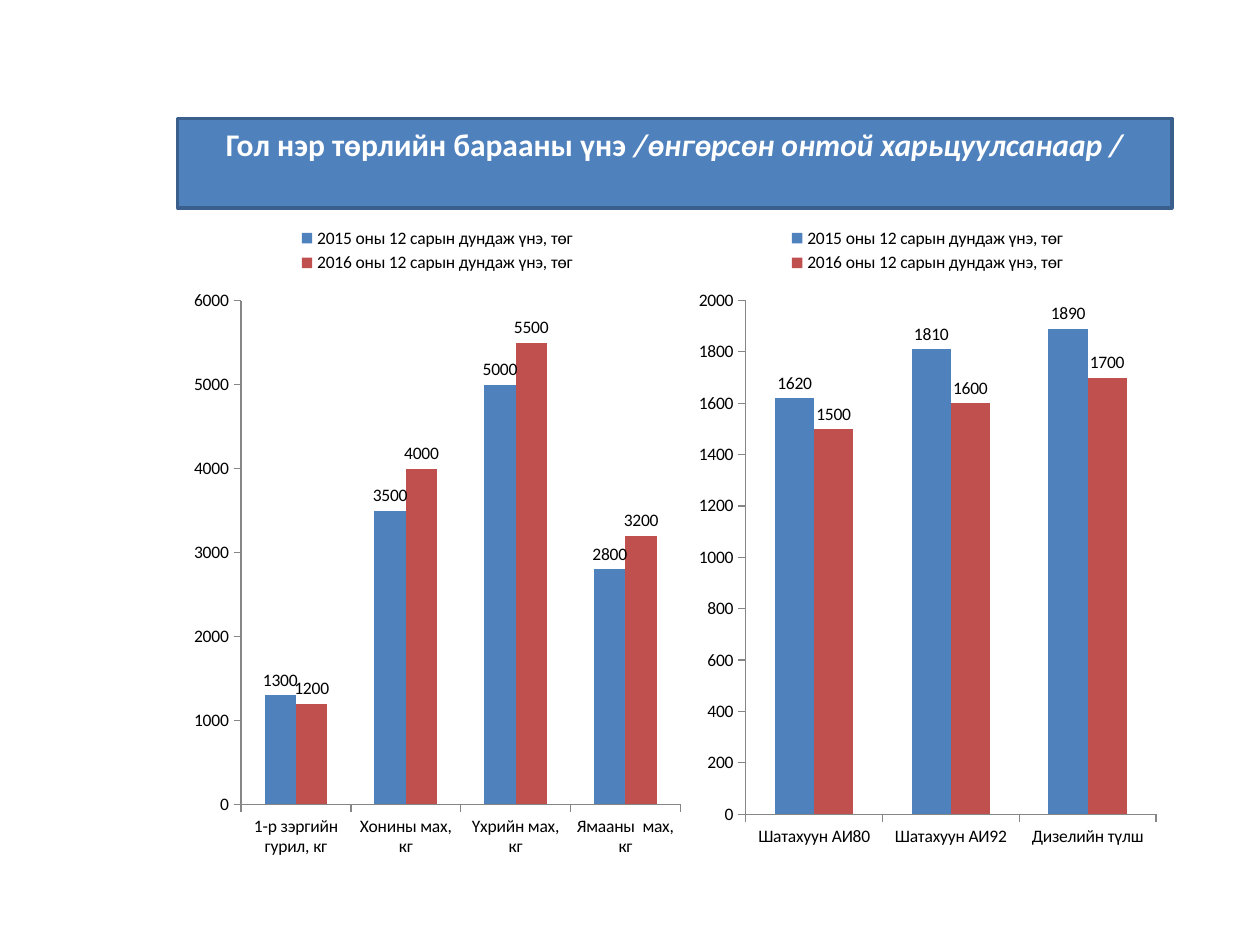
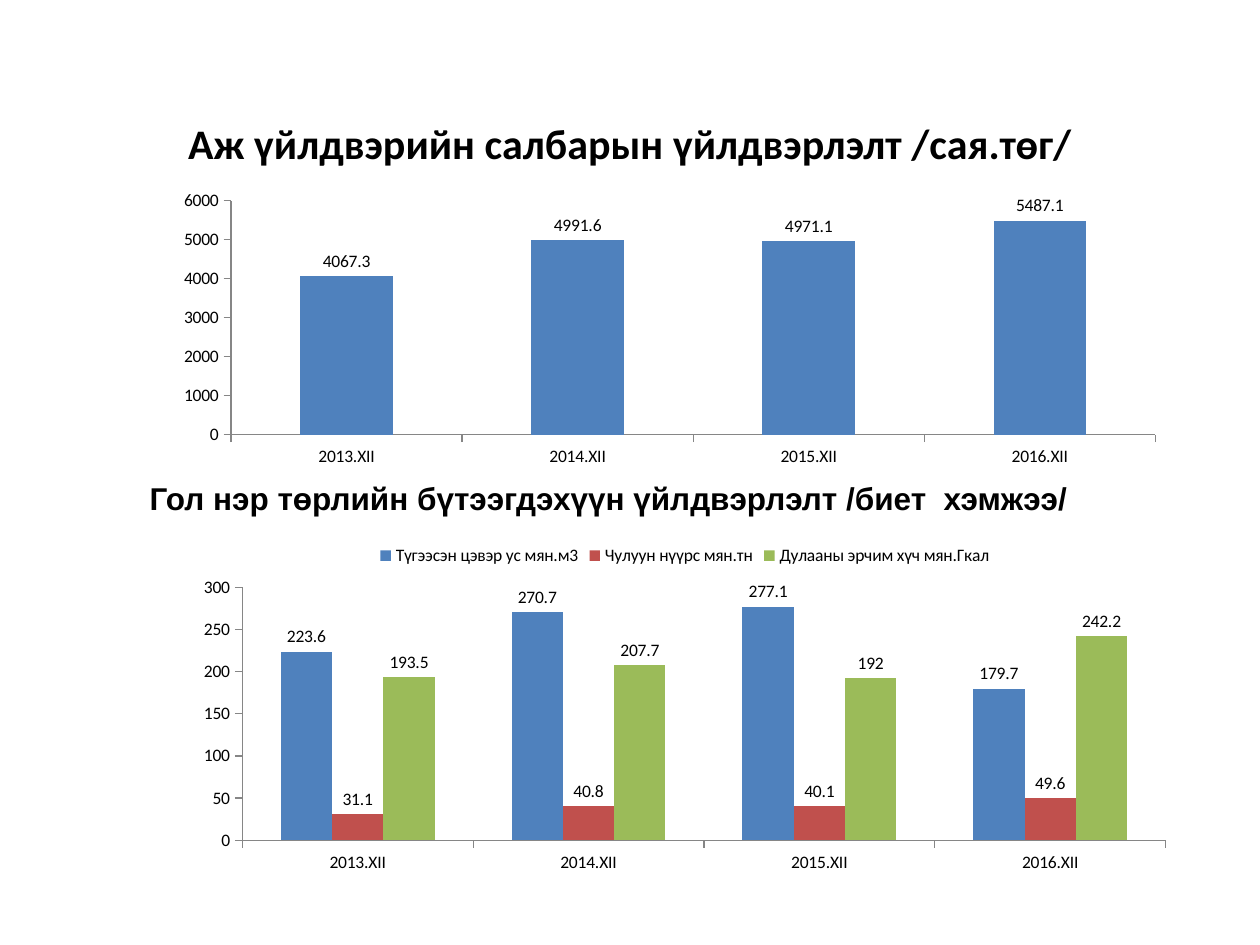
"""Build two slides on prices of main goods and on industrial output."""
from dataclasses import dataclass

from pptx import Presentation
from pptx.chart.data import CategoryChartData
from pptx.dml.color import RGBColor
from pptx.enum.chart import XL_CHART_TYPE as Kind
from pptx.enum.chart import XL_LABEL_POSITION as Spot
from pptx.enum.chart import XL_LEGEND_POSITION as Side
from pptx.enum.chart import XL_TICK_MARK as Tick
from pptx.enum.shapes import MSO_SHAPE as Form
from pptx.enum.text import MSO_ANCHOR as Anchor
from pptx.enum.text import PP_ALIGN as Align
from pptx.util import Inches, Pt

BLUE = RGBColor(0x4F, 0x81, 0xBD)
RED = RGBColor(0xC0, 0x50, 0x4D)
GREEN = RGBColor(0x9B, 0xBB, 0x59)
EDGE = RGBColor(0x3A, 0x5F, 0x8C)
GREY = RGBColor(0x86, 0x86, 0x86)
BLACK = RGBColor(0, 0, 0)
WHITE = RGBColor(0xFF, 0xFF, 0xFF)
HUES = (BLUE, RED, GREEN)
FACE = "Calibri"
TITLE_ONLY, BLANK = 5, 6

PRICES = tuple(f"{year} оны 12 сарын дундаж үнэ, төг" for year in (2015, 2016))
YEARS = tuple(f"{year}.XII" for year in range(2013, 2017))


@dataclass(frozen=True)
class Box:
    left: float
    top: float
    width: float
    height: float

    def lengths(self) -> tuple:
        return tuple(Inches(n) for n in (self.left, self.top, self.width, self.height))


@dataclass(frozen=True)
class Bars:
    box: Box
    cats: tuple
    series: dict
    top: float
    step: float
    legend: bool = True


FUEL = Bars(
    Box(5.47, 1.7, 3.78, 5.12),
    ("Шатахуун АИ80", "Шатахуун АИ92", "Дизелийн түлш"),
    dict(zip(PRICES, ((1620, 1810, 1890), (1500, 1600, 1700)))),
    2000, 200,
)
FOOD = Bars(
    Box(1.46, 1.7, 4.02, 5.2),
    ("1-р зэргийн гурил, кг", "Хонины мах, кг", "Үхрийн мах, кг", "Ямааны  мах, кг"),
    dict(zip(PRICES, ((1300, 3500, 5000, 2800), (1200, 4000, 5500, 3200)))),
    6000, 1000,
)
OUTPUT = Bars(
    Box(1.3, 1.47, 8.03, 2.28), YEARS,
    {"Series 1": (4067.3, 4991.6, 4971.1, 5487.1)},
    6000, 1000, legend=False,
)
GOODS = Bars(
    Box(1.46, 4.22, 7.95, 2.76), YEARS,
    {
        "Түгээсэн цэвэр ус мян.м3": (223.6, 270.7, 277.1, 179.7),
        "Чулуун нүүрс мян.тн": (31.1, 40.8, 40.1, 49.6),
        "Дулааны эрчим хүч мян.Гкал": (193.5, 207.7, 192, 242.2),
    },
    300, 50,
)


def write(shape, text: str, *, size: int = 18, face: str = FACE, color=BLACK,
          align=Align.LEFT, anchor=Anchor.TOP, tail: str = "") -> None:
    """Fill a shape with one bold line, with an optional italic tail."""
    frame = shape.text_frame
    frame.word_wrap = True
    frame.vertical_anchor = anchor
    para = frame.paragraphs[0]
    para.alignment = align
    for part, slant in ((text, False), (tail, True)):
        if part:
            run = para.add_run()
            run.text = part
            font = run.font
            font.name, font.size, font.bold, font.italic = face, Pt(size), True, slant
            font.color.rgb = color


def place(shape, box: Box) -> None:
    """Move a shape to a box."""
    shape.left, shape.top, shape.width, shape.height = box.lengths()


def draw_axis(axis) -> None:
    """Give an axis a thin grey line with outer ticks and no grid."""
    axis.has_major_gridlines = False
    axis.major_tick_mark = Tick.OUTSIDE
    axis.minor_tick_mark = Tick.NONE
    axis.format.line.color.rgb = GREY
    axis.format.line.width = Pt(0.75)


def draw_bars(slide, bars: Bars) -> None:
    """Add a clustered column chart with value labels."""
    data = CategoryChartData()
    data.categories = bars.cats
    for name, vals in bars.series.items():
        data.add_series(name, vals)
    chart = slide.shapes.add_chart(Kind.COLUMN_CLUSTERED, *bars.box.lengths(), data).chart
    chart.font.name, chart.font.size = FACE, Pt(10)
    chart.font.color.rgb = BLACK
    chart.has_title = False
    chart.has_legend = bars.legend
    if bars.legend:
        chart.legend.position = Side.TOP
        chart.legend.include_in_layout = False
    draw_axis(chart.category_axis)
    scale = chart.value_axis
    draw_axis(scale)
    scale.minimum_scale, scale.maximum_scale = 0, bars.top
    scale.major_unit = bars.step
    plot = chart.plots[0]
    plot.gap_width, plot.overlap = 150, 0
    plot.vary_by_categories = False
    for series, hue in zip(plot.series, HUES):
        series.format.fill.solid()
        series.format.fill.fore_color.rgb = hue
        series.invert_if_negative = False
        labels = series.data_labels
        labels.show_value = True
        labels.position = Spot.OUTSIDE_END


def show_prices(deck) -> None:
    """Add the slide that compares prices."""
    slide = deck.slides.add_slide(deck.slide_layouts[BLANK])
    band = slide.shapes.add_shape(Form.RECTANGLE, *Box(1.41, 0.94, 7.89, 0.71).lengths())
    band.shadow.inherit = False
    band.fill.solid()
    band.fill.fore_color.rgb = BLUE
    band.line.color.rgb = EDGE
    band.line.width = Pt(2)
    write(band, "Гол нэр төрлийн барааны үнэ ", tail="/өнгөрсөн онтой харьцуулсанаар /",
          color=WHITE, align=Align.CENTER)
    for bars in (FUEL, FOOD):
        draw_bars(slide, bars)


def show_output(deck) -> None:
    """Add the slide on industrial output."""
    slide = deck.slides.add_slide(deck.slide_layouts[TITLE_ONLY])
    title = slide.shapes.title
    place(title, Box(0.5, 0.78, 9, 0.7))
    write(title, "Аж үйлдвэрийн салбарын үйлдвэрлэлт /сая.төг/", size=24,
          align=Align.CENTER, anchor=Anchor.MIDDLE)
    head = slide.shapes.add_textbox(*Box(1.09, 3.75, 8.67, 0.4).lengths())
    write(head, "Гол нэр төрлийн бүтээгдэхүүн үйлдвэрлэлт /биет  хэмжээ/", face="Arial")
    for bars in (OUTPUT, GOODS):
        draw_bars(slide, bars)


def main() -> None:
    """Build and save the deck."""
    deck = Presentation()
    deck.slide_width, deck.slide_height = Inches(10), Inches(7.5)
    show_prices(deck)
    show_output(deck)
    deck.save("out.pptx")


if __name__ == "__main__":
    main()
